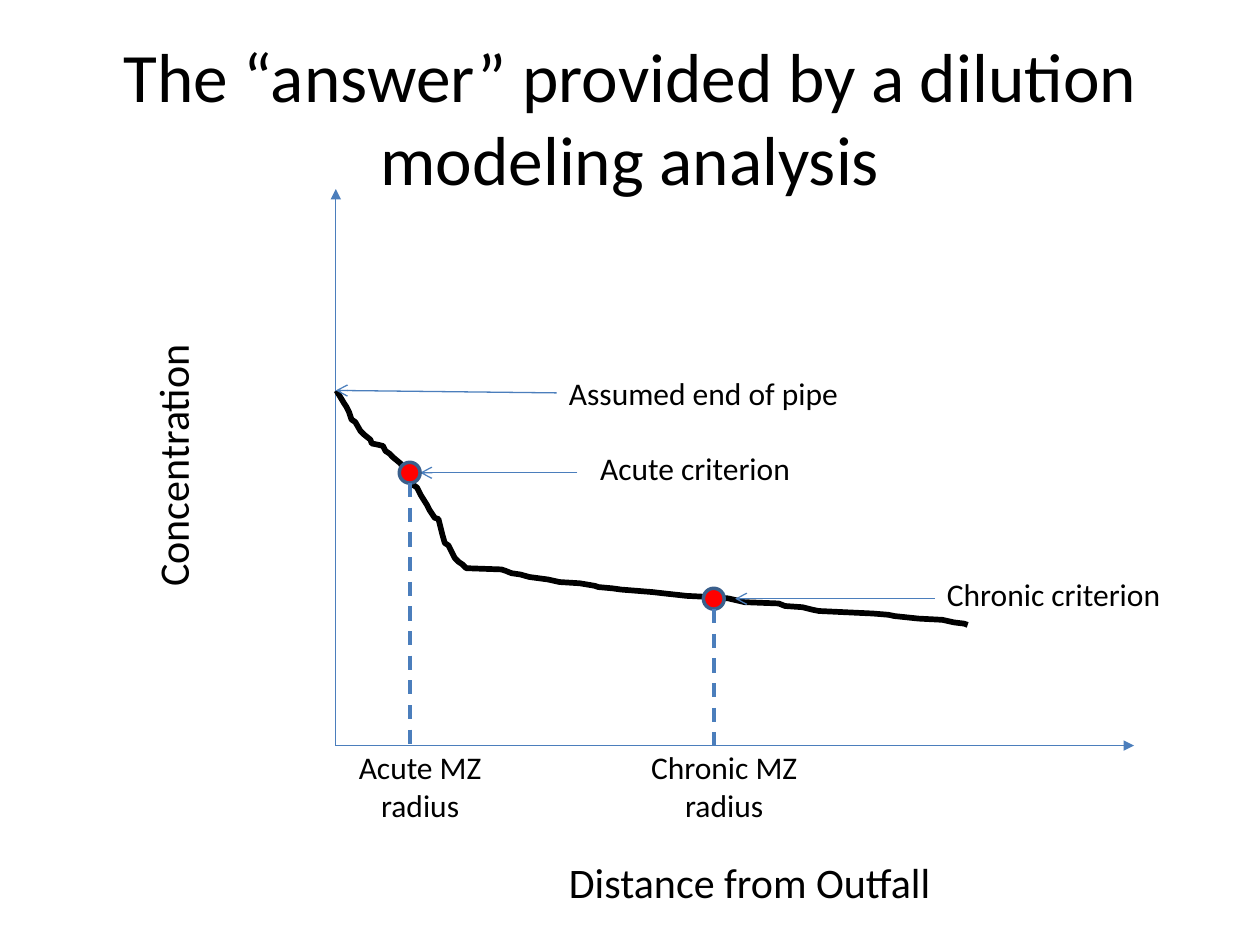
from dataclasses import dataclass

import pptx
import pptx.util
import pptx.dml.color
import pptx.enum.dml
import pptx.enum.shapes
import pptx.enum.text
from pptx.oxml.ns import qn
from lxml import etree

Cm, Pt = pptx.util.Cm, pptx.util.Pt
ALIGN = pptx.enum.text.PP_ALIGN


@dataclass(frozen=True)
class Theme:
    font: str = "Calibri"
    text: str = "000000"
    line: str = "4B7EBC"
    marker: str = "FF0000"
    marker_edge: str = "3A5F8C"
    title_pt: float = 39.6
    axis_pt: float = 24
    label_pt: float = 18
    thin_pt: float = 0.75
    dash_pt: float = 2
    curve_pt: float = 3.25


THEME = Theme()

# Axes, in cm
ORIGIN_X, ORIGIN_Y = 6.77, 15.03
AXIS_TOP, AXIS_RIGHT = 3.81, 22.86
RADIUS = 0.21

# Dilution curve, in hundredths of an inch on the slide
CURVE_UNIT = Cm(0.0254)
CURVE = [
    (267, 310), (273, 320), (275, 323), (277, 327), (279, 333), (282, 335),
    (286, 342), (289, 345), (294, 349), (295, 352), (300, 353), (304, 354),
    (306, 358), (309, 360), (312, 363), (318, 368), (321, 374), (324, 378),
    (328, 385), (331, 387), (334, 393), (339, 401), (341, 405), (345, 411),
    (348, 412), (351, 424), (353, 431), (356, 433), (361, 443), (364, 446),
    (367, 448), (370, 451), (398, 452), (401, 453), (406, 455), (413, 456),
    (420, 458), (435, 460), (444, 462), (460, 463), (472, 465), (475, 466),
    (486, 467), (493, 468), (506, 469), (518, 470), (527, 471), (536, 472),
    (545, 473), (566, 474), (578, 475), (591, 478), (618, 479), (623, 481),
    (637, 482), (645, 484), (650, 485), (693, 487), (705, 488), (710, 489),
    (729, 491), (748, 492), (757, 494), (765, 495), (768, 496),
]


def rgb(value):
    return pptx.dml.color.RGBColor.from_string(value)


def write_text(tf, text, size, align=ALIGN.LEFT):
    """Fill a text frame, one paragraph per line of text."""
    for i, line in enumerate(text.split("\n")):
        p = tf.paragraphs[0] if i == 0 else tf.add_paragraph()
        p.alignment = align
        r = p.add_run()
        r.text = line
        r.font.name = THEME.font
        r.font.size = Pt(size)
        r.font.color.rgb = rgb(THEME.text)


def add_label(s, text, x, y, w, h, rotation=0, **fmt):
    sp = s.shapes.add_textbox(Cm(x), Cm(y), Cm(w), Cm(h))
    sp.rotation = rotation
    tf = sp.text_frame
    tf.word_wrap = True
    tf.auto_size = pptx.enum.text.MSO_AUTO_SIZE.SHAPE_TO_FIT_TEXT
    write_text(tf, text, **fmt)


def add_line(s, x1, y1, x2, y2, arrow=None, width=THEME.thin_pt, dash=False):
    """Draw a straight line; arrow is the type of head at its end."""
    cx = s.shapes.add_connector(pptx.enum.shapes.MSO_CONNECTOR.STRAIGHT,
                                Cm(x1), Cm(y1), Cm(x2), Cm(y2))
    cx.line.color.rgb = rgb(THEME.line)
    cx.line.width = Pt(width)
    if dash:
        cx.line.dash_style = pptx.enum.dml.MSO_LINE.DASH
    spPr = cx._element.spPr
    if arrow:
        etree.SubElement(spPr.find(qn("a:ln")), qn("a:tailEnd"), type=arrow)
    etree.SubElement(spPr, qn("a:effectLst"))


def add_curve(s):
    builder = s.shapes.build_freeform(*CURVE[0], scale=CURVE_UNIT)
    builder.add_line_segments(CURVE[1:], close=False)
    sp = builder.convert_to_shape()
    sp.shadow.inherit = False
    sp.fill.background()
    sp.line.color.rgb = rgb(THEME.text)
    sp.line.width = Pt(THEME.curve_pt)


def add_marker(s, x, y):
    sp = s.shapes.add_shape(pptx.enum.shapes.MSO_SHAPE.OVAL, Cm(x - RADIUS),
                            Cm(y - RADIUS), Cm(2 * RADIUS), Cm(2 * RADIUS))
    sp.shadow.inherit = False
    sp.fill.solid()
    sp.fill.fore_color.rgb = rgb(THEME.marker)
    sp.line.color.rgb = rgb(THEME.marker_edge)
    sp.line.width = Pt(THEME.dash_pt)


def add_title(s, text):
    sp = s.shapes.title
    sp.left, sp.top, sp.width, sp.height = Cm(1.27), Cm(0.76), Cm(22.86), Cm(3.18)
    sp.text_frame.vertical_anchor = pptx.enum.text.MSO_ANCHOR.MIDDLE
    write_text(sp.text_frame, text, size=THEME.title_pt, align=ALIGN.CENTER)


def main():
    prs = pptx.Presentation()
    prs.slide_width, prs.slide_height = Cm(25.4), Cm(19.05)
    s = prs.slides.add_slide(prs.slide_layouts[5])
    add_title(s, "The “answer” provided by a dilution modeling analysis")

    # Axes and curve
    add_line(s, ORIGIN_X, ORIGIN_Y, ORIGIN_X, AXIS_TOP, arrow="triangle")
    add_line(s, ORIGIN_X, ORIGIN_Y, AXIS_RIGHT, ORIGIN_Y, arrow="triangle")
    add_curve(s)
    add_label(s, "Concentration", -0.76, 7.2, 8.47, 1.28,
              rotation=270, size=THEME.axis_pt)
    add_label(s, "Distance from Outfall", 11.22, 17.15, 8.89, 1.28,
              size=THEME.axis_pt)

    # Callouts: text, its box, then the arrow to the curve
    callouts = [
        ("Assumed end of pipe", 11.22, 7.41, 6.56, (11.22, 7.92, ORIGIN_X, 7.87)),
        ("Acute criterion", 11.85, 8.92, 4.66, (11.64, 9.53, 8.47, 9.53)),
        ("Chronic criterion", 18.84, 11.46, 5.08, (18.84, 12.07, 14.82, 12.07)),
    ]
    for text, x, y, w, arrow in callouts:
        add_label(s, text, x, y, w, 1.03, size=THEME.label_pt)
        add_line(s, *arrow, arrow="arrow")

    # Mixing zone radii: marker, drop line and label under the axis
    for name, x, y in [("Acute", 8.26, 9.53), ("Chronic", 14.39, 12.07)]:
        add_marker(s, x, y)
        add_line(s, x, y + RADIUS, x, ORIGIN_Y, width=THEME.dash_pt, dash=True)
        add_label(s, f"{name} MZ\nradius", x + RADIUS - 2.54, 14.95, 5.08, 1.8,
                  size=THEME.label_pt, align=ALIGN.CENTER)

    prs.save("out.pptx")


if __name__ == "__main__":
    main()
